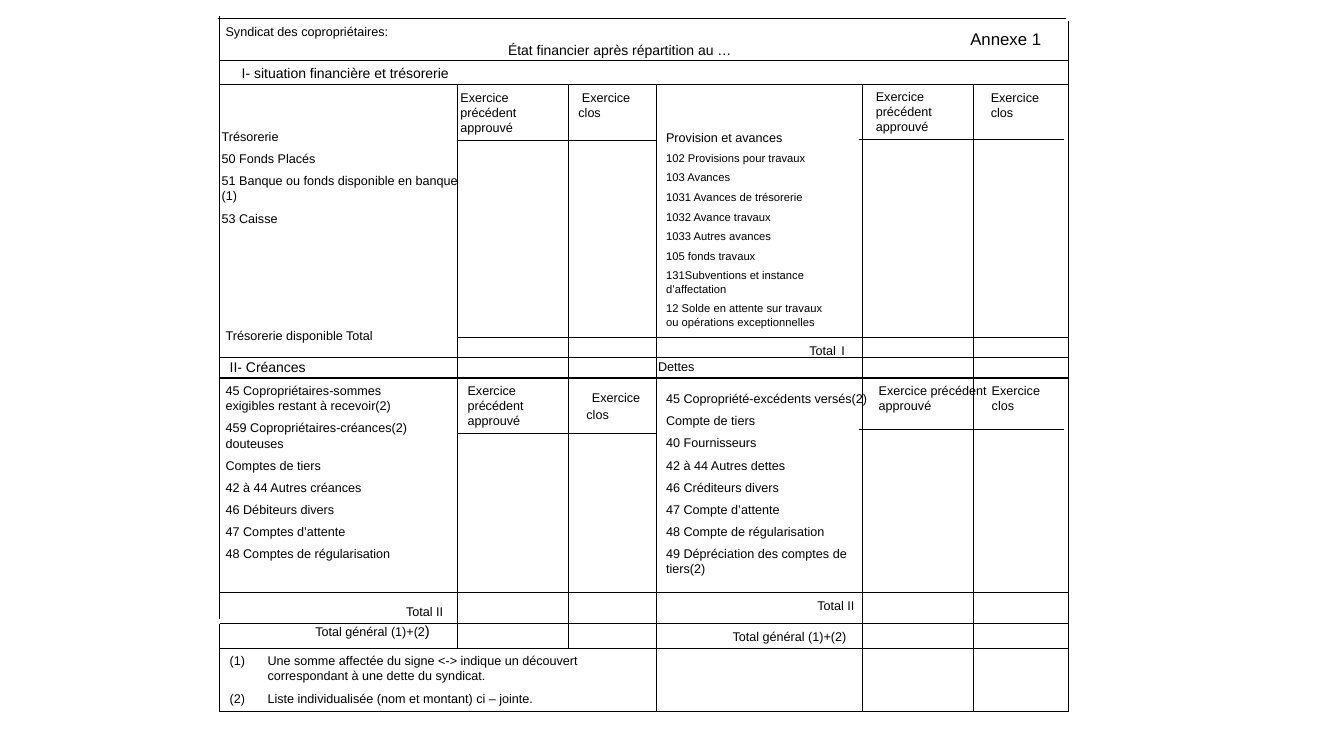
import pptx
import pptx.util
import pptx.dml.color
import pptx.enum.shapes
import pptx.enum.text
import pptx.oxml.ns
from lxml import etree

Pt = pptx.util.Pt
BLACK = pptx.dml.color.RGBColor(0, 0, 0)
FONT = "Arial"
THIN = 0.75

# Table frame: column edges from left to right
LEFT, PRIOR, CLOSED, MID, DEBT, LAST, RIGHT = (
    157, 326.9, 406.1, 468.7, 616.3, 695.5, 763.2)
# Table frame: row edges from top to bottom
TOP, HEAD, BODY, CASH, CLAIM, ITEMS, SUM, GRAND, NOTES, FOOT = (
    13, 43.2, 60.5, 241.2, 255.6, 270, 423.4, 445.7, 463, 508.3)


class Form:
    def __init__(self, deck):
        self.slide = deck.slides.add_slide(deck.slide_layouts[5])
        self.shapes = self.slide.shapes

    def fill(self, shape, paras, size):
        """Write paragraphs; a run is a string or a (string, size) pair."""
        frame = shape.text_frame
        frame.word_wrap = True
        frame.auto_size = pptx.enum.text.MSO_AUTO_SIZE.SHAPE_TO_FIT_TEXT
        frame.vertical_anchor = pptx.enum.text.MSO_ANCHOR.TOP
        for index, item in enumerate(paras):
            para = frame.paragraphs[0] if index == 0 else frame.add_paragraph()
            para.alignment = pptx.enum.text.PP_ALIGN.LEFT
            runs = item if isinstance(item, list) else [item]
            main = size
            if len(runs) == 1 and isinstance(runs[0], tuple):
                main = runs[0][1]
            para.font.name = FONT
            para.font.size = Pt(main)
            para.font.color.rgb = BLACK
            if index:
                para.space_before = Pt(main * 0.55)
            for part in runs:
                run = para.add_run()
                if isinstance(part, tuple):
                    run.text, points = part
                    run.font.size = Pt(points)
                else:
                    run.text = part

    def title(self, x, y, w, h, text, size):
        shape = self.shapes.title
        shape.left, shape.top, shape.width, shape.height = map(Pt, (x, y, w, h))
        self.fill(shape, [text], size)

    def text(self, x, y, w, h, *paras, size=9):
        shape = self.shapes.add_textbox(*map(Pt, (x, y, w, h)))
        self.fill(shape, paras, size)
        return shape

    def notes(self, x, y, w, h, *paras):
        shape = self.text(x, y, w, h, *paras)
        for para in shape.text_frame.paragraphs:
            props = para._p.get_or_add_pPr()
            props.set("marL", str(Pt(27)))
            props.set("indent", str(-Pt(27)))
            mark = etree.Element(pptx.oxml.ns.qn("a:buAutoNum"))
            mark.set("type", "arabicParenBoth")
            props.find(pptx.oxml.ns.qn("a:defRPr")).addprevious(mark)

    def line(self, x1, y1, x2, y2):
        kind = pptx.enum.shapes.MSO_CONNECTOR.STRAIGHT
        rule = self.shapes.add_connector(kind, *map(Pt, (x1, y1, x2, y2)))
        rule.line.color.rgb = BLACK
        rule.line.width = Pt(THIN)
        etree.SubElement(rule._element.spPr, pptx.oxml.ns.qn("a:effectLst"))

    def box(self, x1, y1, x2, y2):
        kind = pptx.enum.shapes.MSO_SHAPE.RECTANGLE
        shape = self.shapes.add_shape(kind, *map(Pt, (x1, y1, x2 - x1, y2 - y1)))
        shape.shadow.inherit = False
        shape.fill.background()
        shape.line.color.rgb = BLACK
        shape.line.width = Pt(THIN)


def main():
    deck = pptx.Presentation()
    deck.slide_width, deck.slide_height = Pt(960), Pt(540)
    form = Form(deck)

    # Frame
    form.box(DEBT, BODY, RIGHT, SUM)
    for y in (HEAD, BODY, CLAIM, ITEMS, GRAND, NOTES, FOOT):
        form.line(LEFT, y, RIGHT, y)
    form.line(155.5, TOP, 761.8, TOP)
    form.line(PRIOR, CASH, RIGHT, CASH)
    form.line(LEFT, SUM, DEBT, SUM)
    for x, start, end in (
            (LEFT, 11.5, 442.1), (LEFT, GRAND, FOOT),
            (PRIOR, BODY, NOTES), (CLOSED, BODY, NOTES),
            (MID, BODY, 479.5), (MID, 474.5, FOOT), (DEBT, SUM, FOOT),
            (LAST, BODY, 128.2), (LAST, 122.4, FOOT),
            (RIGHT, 15.1, BODY), (RIGHT, SUM, GRAND), (RIGHT, GRAND, FOOT)):
        form.line(x, start, x, end)

    # Rules below the column heads
    for y in (100.1, 309.6):
        form.line(PRIOR, y, MID, y)
    for y in (99.4, 306.7):
        form.line(613.4, y, 760.3, y)

    # Heading
    form.title(355.7, 25.9, 193, 19.4,
               "État financier après répartition au …", 10)
    form.text(154.1, 13.7, 153.4, 18, "Syndicat des copropriétaires:")
    form.text(686, 17, 77, 22, "Annexe 1", size=12)
    form.text(165.6, 42.5, 198.7, 19.4,
              "I- situation financière et trésorerie", size=10)
    form.text(LEFT, 252.7, 187.2, 19.4, "II- Créances", size=10)
    form.text(463, 252.7, 45.4, 18, "Dettes")

    # Column heads
    for x, y, w in ((321.8, BODY, 84.2), (PRIOR, ITEMS, 85),
                    (618.5, 59.8, 73.4), (620.6, ITEMS, 92.2)):
        form.text(x, y, w, 40.3, "Exercice précédent approuvé")
    for x, y, w, lead in ((CLOSED, BODY, 62.6, " "),
                          (411.8, ITEMS, 56.9, (" ", 14)),
                          (700.6, BODY, 56.9, ""),
                          (701.3, ITEMS, 56.9, "")):
        runs = [lead, "Exercice clos"] if lead else "Exercice clos"
        form.text(x, y, w, 29, runs)

    # Part I
    form.text(151.2, 88.6, 193, 103.7, "Trésorerie", "50 Fonds Placés",
              "51 Banque ou fonds disponible en banque (1)", "53 Caisse")
    funds = ("102 Provisions pour travaux", "103 Avances",
             "1031 Avances de trésorerie", "1032 Avance travaux",
             "1033 Autres avances", "105 fonds travaux",
             "131Subventions et instance d’affectation",
             "12 Solde en attente sur travaux ou opérations exceptionnelles")
    form.text(MID, 89.3, 136.1, 154.1, "Provision et avances",
              *[[(fund, 8)] for fund in funds])

    # Part II
    form.text(154.1, ITEMS, 147.6, 138.2,
              "45 Copropriétaires-sommes exigibles restant à recevoir(2)",
              "459 Copropriétaires-créances(2) douteuses", "Comptes de tiers",
              "42 à 44 Autres créances", "46 Débiteurs divers",
              "47 Comptes d’attente", "48 Comptes de régularisation")
    form.text(MID, 275.8, 159.1, 169.2,
              "45 Copropriété-excédents versés(2)", "Compte de tiers",
              "40 Fournisseurs", "42 à 44 Autres dettes",
              "46 Créditeurs divers", "47 Compte d’attente",
              "48 Compte de régularisation",
              "49 Dépréciation des comptes de tiers(2)")

    # Totals
    form.text(154.1, 230.4, 130.3, 18, "Trésorerie disponible Total")
    form.text(571, 236.2, 51.1, 24.5, ["Total", (" ", 14), "I"])
    form.text(576.7, SUM, 67.7, 18, "Total II")
    form.text(283, 427.7, 56.9, 43.9, "Total II")
    form.text(218.2, 440.6, 141.8, 20.9, ["Total général (1)+(2", (")", 10.5)])
    form.text(516.2, GRAND, 113.8, 18, "Total général (1)+(2)")

    # Notes
    form.notes(LEFT, NOTES, 318.2, 45.4,
               "Une somme affectée du signe <-> indique un découvert "
               "correspondant à une dette du syndicat.",
               "Liste individualisée (nom et montant) ci – jointe.")

    deck.save("out.pptx")


if __name__ == "__main__":
    main()
